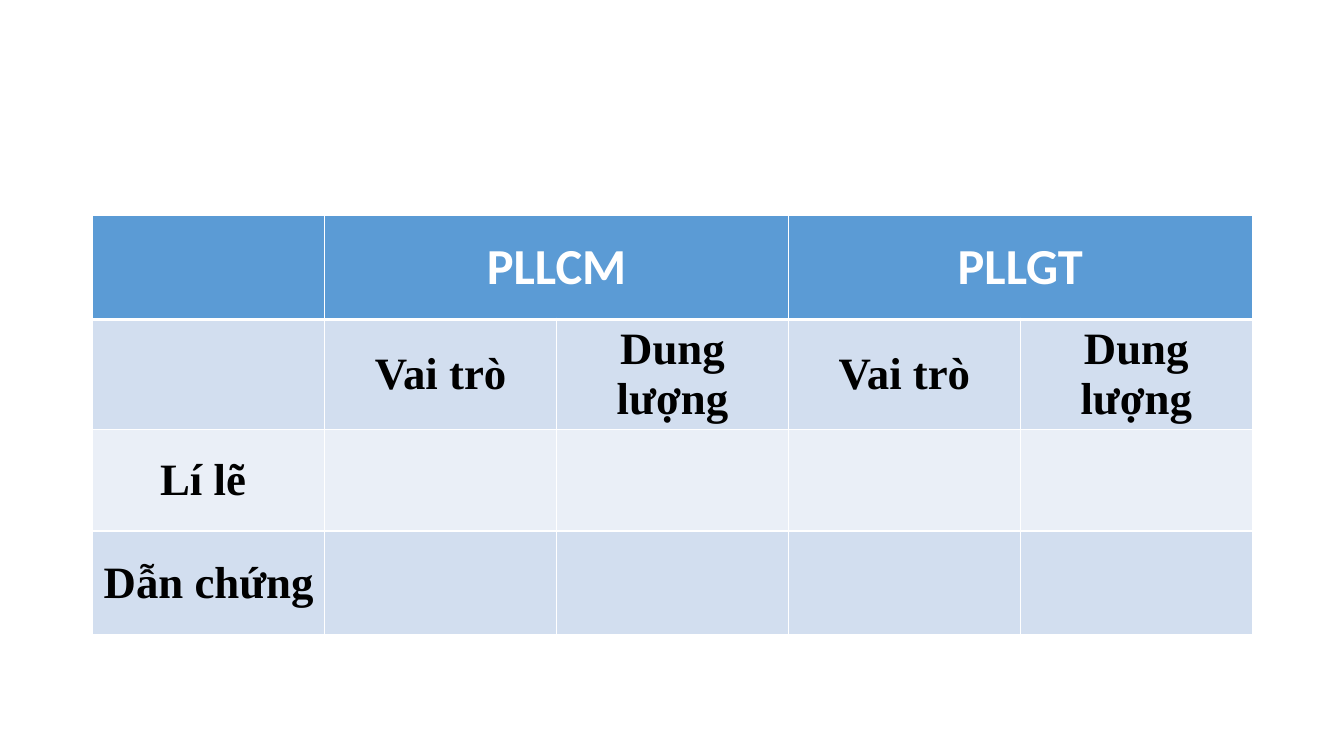
"""Build a slide with a table comparing PLLCM and PLLGT."""
import pptx
import pptx.dml.color
import pptx.enum.text
import pptx.oxml
import pptx.oxml.ns
import pptx.util

Inches = pptx.util.Inches
ROWS = [
    ["", "PLLCM", "", "PLLGT", ""],
    ["", "Vai trò", "Dung lượng", "Vai trò", "Dung lượng"],
    ["Lí lẽ ", "", "", "", ""],
    ["Dẫn chứng", "", "", "", ""],
]
ROW_FILLS = ["5B9BD5", "D2DEEF", "EAEFF7", "D2DEEF"]
ROW_HEIGHTS = [1.03, 1.03, 1.01, 1.03]
COLUMN_WIDTH = 2.3


def color(value):
    """Return the colour for a hex string."""
    return pptx.dml.color.RGBColor.from_string(value)


def set_borders(cell, top, bottom):
    """Draw white cell borders with the given top and bottom widths in points."""
    properties = cell._tc.get_or_add_tcPr()
    for side, width in (("L", 1), ("R", 1), ("T", top), ("B", bottom)):
        properties.append(pptx.oxml.parse_xml(
            f'<a:ln{side} {pptx.oxml.ns.nsdecls("a")} w="{pptx.util.Pt(width)}">'
            '<a:solidFill><a:srgbClr val="FFFFFF"/></a:solidFill>'
            f'</a:ln{side}>'))


def set_fill(cell, fill):
    """Fill a cell with one colour."""
    cell.fill.solid()
    cell.fill.fore_color.rgb = color(fill)


def set_text(cell, text, font_name, size, text_color):
    """Write bold centred text in a cell."""
    cell.text = text
    cell.vertical_anchor = pptx.enum.text.MSO_ANCHOR.MIDDLE
    paragraph = cell.text_frame.paragraphs[0]
    paragraph.alignment = pptx.enum.text.PP_ALIGN.CENTER
    font = paragraph.font
    font.name, font.size, font.bold = font_name, pptx.util.Pt(size), True
    font.color.rgb = color(text_color)


def add_comparison_table(slide):
    """Add the table with its header row and merged group headings."""
    column_count = len(ROWS[0])
    table = slide.shapes.add_table(
        len(ROWS), column_count, Inches(0.92), Inches(2.14),
        Inches(COLUMN_WIDTH * column_count), Inches(sum(ROW_HEIGHTS))).table
    for column in table.columns:
        column.width = Inches(COLUMN_WIDTH)
    for row_index, texts in enumerate(ROWS):
        row = table.rows[row_index]
        row.height = Inches(ROW_HEIGHTS[row_index])
        is_header = row_index == 0
        style = ("Calibri", 36, "FFFFFF") if is_header else ("Times New Roman", 32, "000000")
        for cell, text in zip(row.cells, texts):
            set_borders(cell, 3 if row_index == 1 else 1, 3 if is_header else 1)
            set_fill(cell, ROW_FILLS[row_index])
            if text:
                set_text(cell, text, *style)
    for first in (1, 3):
        table.cell(0, first).merge(table.cell(0, first + 1))


def main():
    """Create and save the presentation."""
    presentation = pptx.Presentation()
    presentation.slide_width = Inches(13.33)
    presentation.slide_height = Inches(7.5)
    slide = presentation.slides.add_slide(presentation.slide_layouts[6])
    add_comparison_table(slide)
    presentation.save("out.pptx")


if __name__ == "__main__":
    main()
